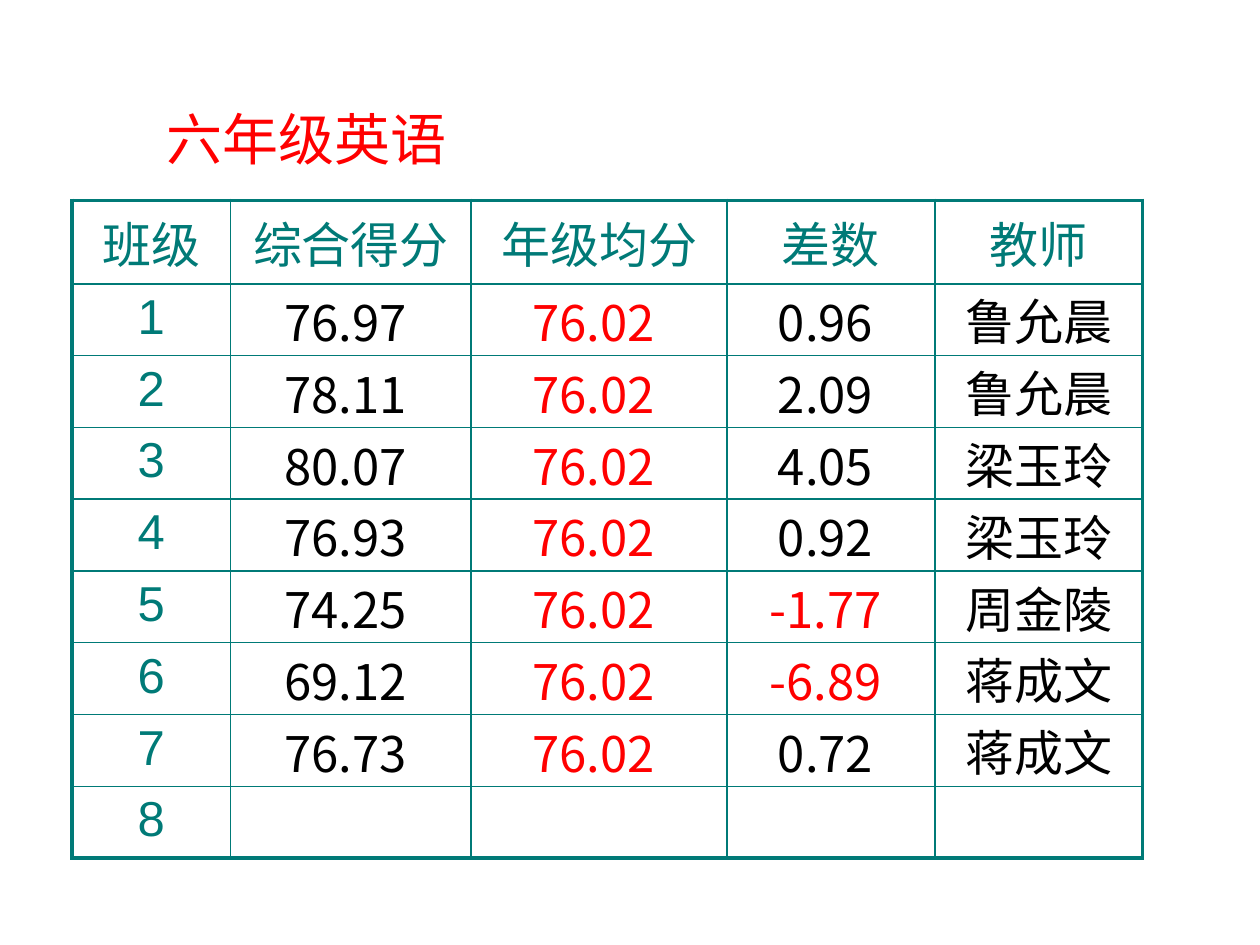
import pptx
import pptx.dml.color
import pptx.enum.text
import pptx.oxml
import pptx.oxml.ns
import pptx.util
from pptx.util import Inches

TEAL, RED, BLACK = "007A77", "FF0000", "000000"
LATIN, CHINESE = "Arial", "Noto Sans CJK SC"
ANCHOR = pptx.enum.text.MSO_ANCHOR
COLUMN_WIDTHS = [1.26, 1.91, 2.03, 1.65, 1.65]
ROW_HEIGHT = 0.57
GRADE_AVERAGE = "76.02"
HEADINGS = ["班级", "综合得分", "年级均分", "差数", "教师"]
CLASSES = [
    ("76.97", "0.96", "鲁允晨"),
    ("78.11", "2.09", "鲁允晨"),
    ("80.07", "4.05", "梁玉玲"),
    ("76.93", "0.92", "梁玉玲"),
    ("74.25", "-1.77", "周金陵"),
    ("69.12", "-6.89", "蒋成文"),
    ("76.73", "0.72", "蒋成文"),
]


def color(value):
    return pptx.dml.color.RGBColor.from_string(value)


def write(para, text, size, font, fill):
    para.text = text
    para.alignment = pptx.enum.text.PP_ALIGN.CENTER
    para.font.size = pptx.util.Pt(size)
    para.font.name = font
    para.font.color.rgb = color(fill)


def add_title(page, text):
    box = page.shapes.add_textbox(Inches(0.42), Inches(0.78), Inches(4.03), Inches(0.63))
    box.text_frame.word_wrap = True
    write(box.text_frame.paragraphs[0], text, 32, LATIN, RED)


def set_borders(cell, widths):
    """Draw the left, right, top and bottom edges with widths in points."""
    properties = cell._tc.get_or_add_tcPr()
    for position, (side, width) in enumerate(zip("LRTB", widths)):
        line = pptx.oxml.parse_xml(
            f'<a:ln{side} {pptx.oxml.ns.nsdecls("a")} w="{pptx.util.Pt(width)}">'
            f'<a:solidFill><a:srgbClr val="{TEAL}"/></a:solidFill></a:ln{side}>'
        )
        properties.insert(position, line)


def fill_cell(cell, text, column, is_heading):
    if is_heading or column == 0:
        write(cell.text_frame.paragraphs[0], text, 28, LATIN, TEAL)
        return
    cell.margin_left = cell.margin_right = cell.margin_top = cell.margin_bottom = 0
    is_teacher = column == len(HEADINGS) - 1
    cell.vertical_anchor = ANCHOR.MIDDLE if is_teacher else ANCHOR.BOTTOM
    is_red = column == 2 or text.startswith("-")
    # Scores keep one space after the digits, as in a spreadsheet number format.
    shown = text if is_teacher else text + " "
    write(cell.text_frame.paragraphs[0], shown, 28, CHINESE, RED if is_red else BLACK)


def add_score_table(page):
    rows = [HEADINGS]
    for number, (score, difference, teacher) in enumerate(CLASSES, 1):
        rows.append([str(number), score, GRADE_AVERAGE, difference, teacher])
    rows.append([str(len(rows)), "", "", "", ""])

    last_row, last_column = len(rows) - 1, len(HEADINGS) - 1
    frame = page.shapes.add_table(
        len(rows), len(HEADINGS), Inches(0.57), Inches(1.59),
        Inches(sum(COLUMN_WIDTHS)), Inches(ROW_HEIGHT * len(rows)),
    )
    table = frame.table
    table.first_row = table.horz_banding = False
    for column, width in zip(table.columns, COLUMN_WIDTHS):
        column.width = Inches(width)
    for r, values in enumerate(rows):
        table.rows[r].height = Inches(ROW_HEIGHT)
        for c, text in enumerate(values):
            cell = table.cell(r, c)
            cell.fill.background()
            outer_edges = (c == 0, c == last_column, r == 0, r == last_row)
            set_borders(cell, [2.25 if outer else 1 for outer in outer_edges])
            if text:
                fill_cell(cell, text, c, r == 0)


def main():
    deck = pptx.Presentation()
    deck.slide_width, deck.slide_height = Inches(10), Inches(7.5)
    page = deck.slides.add_slide(deck.slide_layouts[6])
    add_score_table(page)
    add_title(page, "六年级英语")
    deck.save("out.pptx")


if __name__ == "__main__":
    main()
